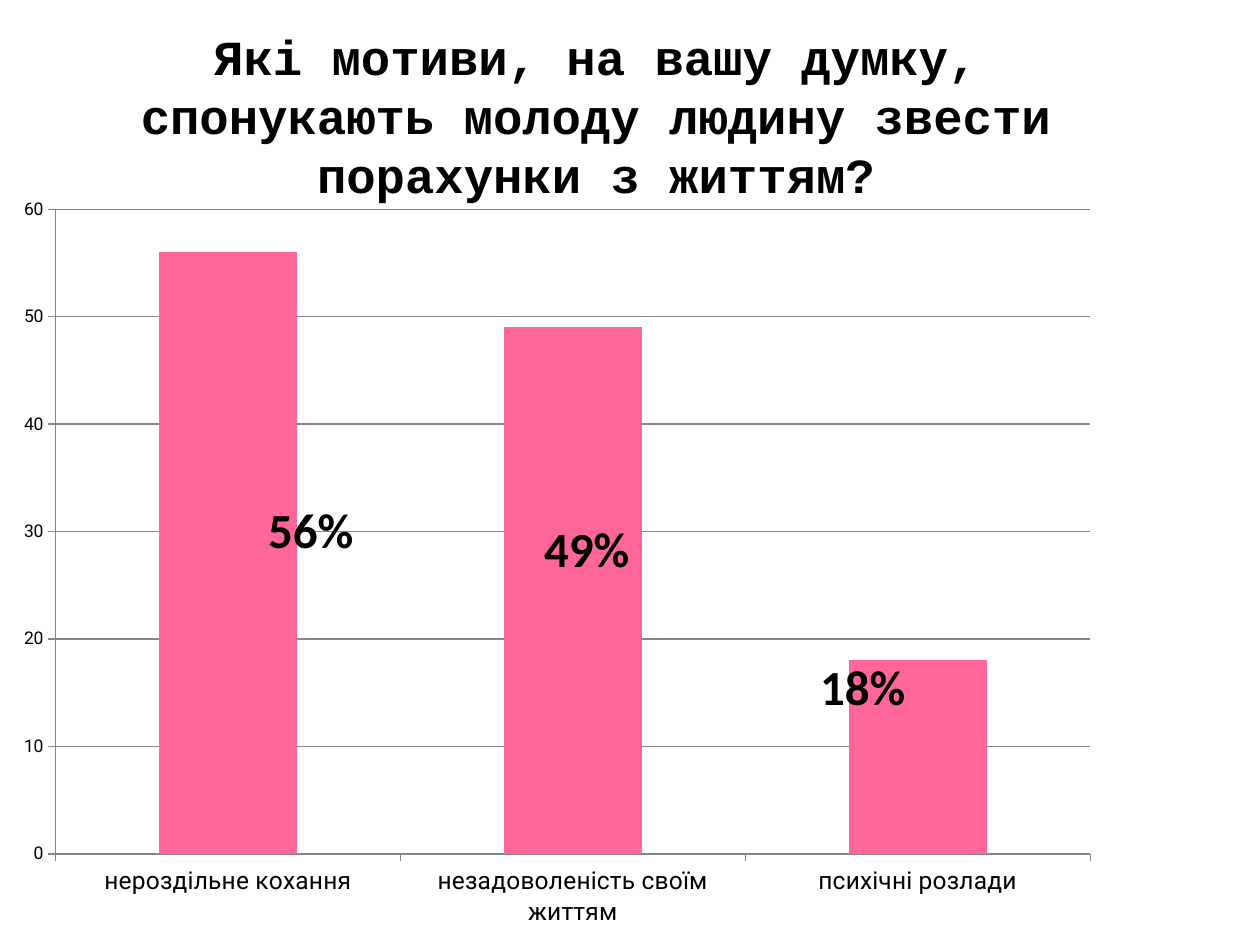
from lxml import etree
from pptx import Presentation
from pptx.chart.data import CategoryChartData
from pptx.dml.color import RGBColor
from pptx.enum.chart import XL_CHART_TYPE, XL_TICK_MARK
from pptx.enum.text import MSO_ANCHOR, PP_ALIGN
from pptx.oxml.ns import qn
from pptx.util import Inches, Pt

COLUMNS = XL_CHART_TYPE.COLUMN_CLUSTERED
TICK_OUTSIDE, TICK_NONE = XL_TICK_MARK.OUTSIDE, XL_TICK_MARK.NONE
MIDDLE, CENTER = MSO_ANCHOR.MIDDLE, PP_ALIGN.CENTER

THEME = {
    "ink": RGBColor(0, 0, 0),
    "bar": RGBColor(0xFF, 0x66, 0x99),
    "grid": RGBColor(0x86, 0x86, 0x86),
    "title_font": "Courier New",
    "label_font": "Calibri",
    "chart_font": "Roboto",
    "heading_size": Pt(28),
    "category_size": Pt(14),
    "value_size": Pt(10),
}


def style_font(font, name, size, bold=False):
    font.name, font.size, font.bold = name, size, bold
    font.color.rgb = THEME["ink"]


prs = Presentation()
prs.slide_width, prs.slide_height = Inches(10), Inches(7.5)
slide = prs.slides.add_slide(prs.slide_layouts[5])

motives = {
    "нероздільне кохання": 56,
    "незадоволеність своїм життям": 49,
    "психічні розлади": 18,
}
survey = CategoryChartData()
survey.categories = list(motives)
survey.add_series("Series 1", list(motives.values()))
chart = slide.shapes.add_chart(
    COLUMNS, 0, Inches(1.48), Inches(8.83), Inches(6.02), survey
).chart
chart.has_legend = False
chart.has_title = False
style_font(chart.font, THEME["chart_font"], THEME["value_size"])

plot = chart.plots[0]
plot.gap_width = 150
plot.vary_by_categories = False
bars = plot.series[0].format.fill
bars.solid()
bars.fore_color.rgb = THEME["bar"]

percent_axis, motive_axis = chart.value_axis, chart.category_axis
percent_axis.minimum_scale, percent_axis.maximum_scale = 0, 60
percent_axis.major_unit = 10
percent_axis.has_major_gridlines = True
for axis in (percent_axis, motive_axis):
    axis.major_tick_mark, axis.minor_tick_mark = TICK_OUTSIDE, TICK_NONE
style_font(motive_axis.tick_labels.font, THEME["chart_font"], THEME["category_size"])
for ruled in (percent_axis, motive_axis, percent_axis.major_gridlines):
    ruled.format.line.color.rgb = THEME["grid"]
    ruled.format.line.width = Pt(0.75)

plot_area = chart.element.find(".//" + qn("c:plotArea"))
for old_layout in plot_area.findall(qn("c:layout")):
    plot_area.remove(old_layout)
layout = etree.Element(qn("c:layout"))
plot_area.insert(0, layout)
manual = etree.SubElement(layout, qn("c:manualLayout"))
for tag, value in (
    ("layoutTarget", "inner"), ("xMode", "edge"), ("yMode", "edge"),
    ("x", "0.05"), ("y", "0.03"), ("w", "0.93"), ("h", "0.85"),
):
    etree.SubElement(manual, qn("c:" + tag)).set("val", value)

label_left, label_step = 2.03, 2.19
for column, (share, top) in enumerate(zip(motives.values(), (3.91, 4.06, 5.16))):
    label = slide.shapes.add_textbox(
        Inches(label_left + column * label_step), Inches(top), Inches(1.02), Inches(0.57)
    ).text_frame
    label.word_wrap = True
    label.vertical_anchor = MIDDLE
    label.text = f"{share}%"
    style_font(label.paragraphs[0].font, THEME["label_font"], THEME["heading_size"], True)

title = slide.shapes.title
title.left, title.top = Inches(0.55), Inches(0.39)
title.width, title.height = Inches(8.36), Inches(1.04)
question = title.text_frame
question.text = "Які мотиви, на вашу думку, спонукають молоду людину звести порахунки з життям?"
question.word_wrap = True
question.vertical_anchor = MIDDLE
question.paragraphs[0].alignment = CENTER
style_font(question.paragraphs[0].font, THEME["title_font"], THEME["heading_size"], True)

prs.save("out.pptx")
